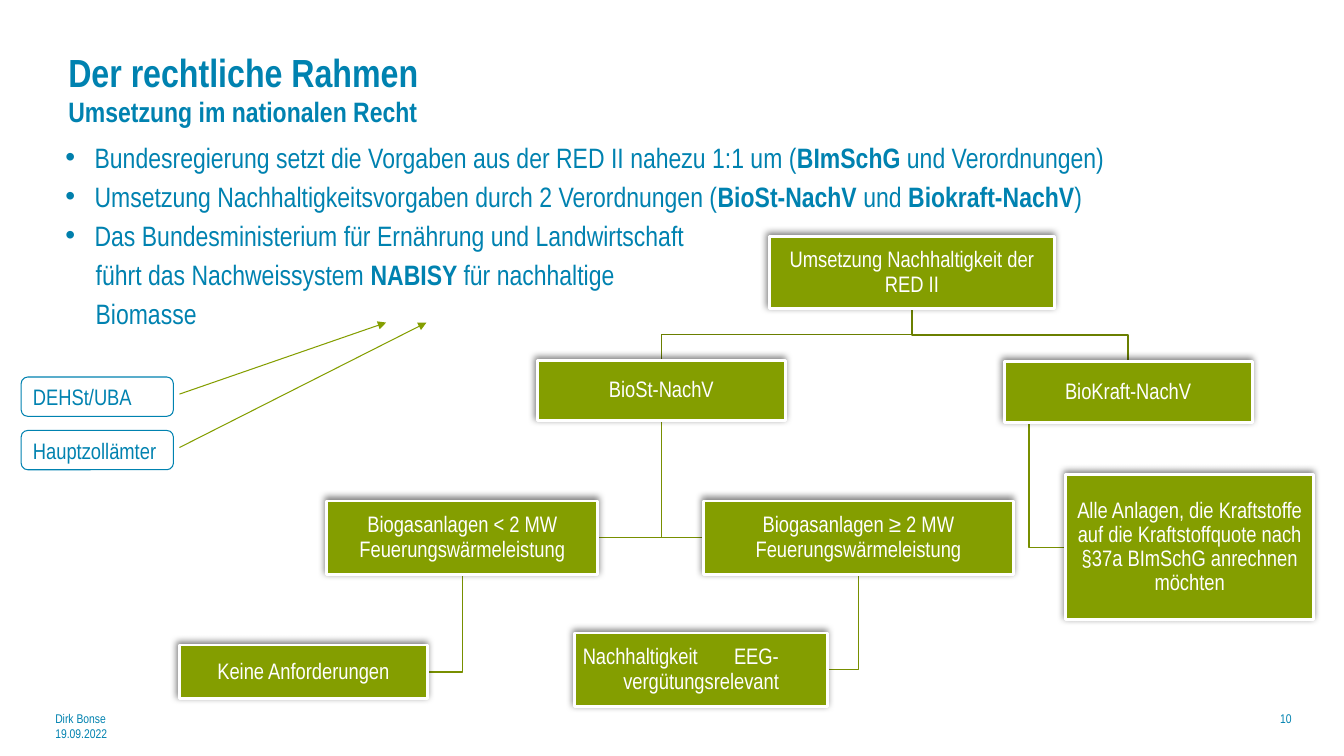
"""Build the slide on the national implementation of RED II as an organisation chart."""
from lxml import etree
from pptx import Presentation
from pptx.dml.color import RGBColor
from pptx.enum.shapes import MSO_CONNECTOR, MSO_SHAPE
from pptx.enum.text import MSO_ANCHOR, PP_ALIGN
from pptx.oxml.ns import qn
from pptx.util import Inches, Pt

LEFT, CENTER, RIGHT = PP_ALIGN.LEFT, PP_ALIGN.CENTER, PP_ALIGN.RIGHT
TOP, MIDDLE = MSO_ANCHOR.TOP, MSO_ANCHOR.MIDDLE
RECTANGLE, ROUNDED = MSO_SHAPE.RECTANGLE, MSO_SHAPE.ROUNDED_RECTANGLE
STRAIGHT = MSO_CONNECTOR.STRAIGHT

THEME = {
    "font": "Arial Narrow",
    "blue": RGBColor.from_string("0082B0"),
    "bullet": "007FAC",
    "green": RGBColor.from_string("849E00"),
    "upper line": RGBColor.from_string("6A7F00"),
    "lower line": RGBColor.from_string("788F00"),
    "white": RGBColor.from_string("FFFFFF"),
    "title": 28, "body": 20, "node": 16, "footer": 9,
}

deck = Presentation()
deck.slide_width, deck.slide_height = Inches(13.33), Inches(7.5)
page = deck.slides.add_slide(deck.slide_layouts[6])
COLUMN, ROW = deck.slide_width / 133.3, deck.slide_height / 75


def place(*cells):
    """Turn alternating columns and rows into slide lengths."""
    return [round(cell * (ROW if index % 2 else COLUMN)) for index, cell in enumerate(cells)]


def write(box, lines, sizes, color, align=LEFT, anchor=TOP):
    """Write one paragraph per line, with the parts between asterisks in bold."""
    frame = box.text_frame
    frame.word_wrap = True
    frame.vertical_anchor = anchor
    for index, line in enumerate(lines):
        para = frame.add_paragraph() if index else frame.paragraphs[0]
        para.alignment = align
        for part, words in enumerate(line.split("*")):
            if words:
                span = para.add_run()
                span.text = words
                span.font.name = THEME["font"]
                span.font.size = Pt(sizes[index % len(sizes)])
                span.font.bold = part % 2 == 1
                span.font.color.rgb = color
    return frame.paragraphs


title = page.shapes.add_textbox(*place(5.8, 2.5, 98.7, 12.5))
write(title, ["*Der rechtliche Rahmen*", "*Umsetzung im nationalen Recht*"],
      [THEME["title"], THEME["body"]], THEME["blue"], anchor=MIDDLE)

NODES = {
    "root": ((76.3, 23.5, 28.3, 7.1), ["Umsetzung Nachhaltigkeit der RED II"]),
    "power": ((53.3, 35.8, 24.6, 5.9), ["BioSt-NachV"]),
    "fuel": ((99.6, 35.9, 24.6, 6), ["BioKraft-NachV"]),
    "small": ((32.4, 49.7, 26.9, 7.3), ["Biogasanlagen < 2 MW Feuerungswärmeleistung"]),
    "large": ((69.8, 49.7, 30.7, 7.3), ["Biogasanlagen ≥ 2 MW Feuerungswärmeleistung"]),
    "none": ((17.8, 64, 24.6, 5.3), ["Keine Anforderungen"]),
    "paid": ((57, 62.8, 25.1, 7.3), ["Nachhaltigkeit\tEEG-", "vergütungsrelevant"]),
    "quota": ((105.7, 47.1, 24.6, 14.4),
              ["Alle Anlagen, die Kraftstoffe auf die Kraftstoffquote nach "
               "§37a BImSchG anrechnen möchten"]),
}
BRANCHES = [
    ("fuel", "quota", 0.1), ("root", "fuel", 0.5), ("large", "paid", 0.5), ("power", "large", 0.5),
    ("small", "none", 0.5), ("power", "small", 0.5), ("root", "power", 0.5),
]

for parent, child, share in BRANCHES:
    left, top, width, height = NODES[parent][0]
    child_left, child_top, child_width, child_height = NODES[child][0]
    start_x, start_y = left + width * share, top + height
    if parent == "root":
        bend, end_x = (start_y + child_top) / 2, child_left + child_width / 2
        corners = [(start_x, bend), (end_x, bend), (end_x, child_top)]
    else:
        bend = child_top + child_height / 2
        end_x = child_left if child_left > start_x else child_left + child_width
        corners = [(start_x, bend), (end_x, bend)]
    outline = page.shapes.build_freeform(*place(start_x, start_y), scale=1.0)
    outline.add_line_segments([place(*corner) for corner in corners], close=False)
    branch = outline.convert_to_shape()
    branch.shadow.inherit = False
    branch.fill.background()
    branch.line.color.rgb = THEME["upper line" if parent == "root" else "lower line"]
    branch.line.width = Pt(1)

node_paras = {}
for name, (cells, lines) in NODES.items():
    node = page.shapes.add_shape(RECTANGLE, *place(*cells))
    node.shadow.inherit = False
    node.fill.solid()
    node.fill.fore_color.rgb = THEME["green"]
    node.line.color.rgb = THEME["white"]
    node.line.width = Pt(2)
    effects = node._element.spPr.find(qn("a:effectLst"))
    shade = etree.SubElement(effects, qn("a:outerShdw"), blurRad=str(Pt(5)), dist=str(Pt(2)),
                             dir=str(245 * 60000), algn="ctr", rotWithShape="0")
    tone = etree.SubElement(shade, qn("a:srgbClr"), val="000000")
    etree.SubElement(tone, qn("a:alpha"), val="50000")
    frame = node.text_frame
    frame.margin_left = frame.margin_right = frame.margin_top = frame.margin_bottom = Inches(0.01)
    node_paras[name] = write(node, lines, [THEME["node"]], THEME["white"], CENTER, MIDDLE)
    for para in node_paras[name]:
        para.line_spacing = 0.9

spread = node_paras["paid"][0]
spread.alignment = LEFT
settings = spread._p.get_or_add_pPr()
settings.set("marL", str(Inches(0.07)))
settings.set("indent", "0")
tabs = etree.SubElement(settings, qn("a:tabLst"))
etree.SubElement(tabs, qn("a:tab"), pos=str(Inches(2.41)), algn="r")

body = page.shapes.add_textbox(*place(5.5, 13.4, 122.2, 49.6))
body_paras = write(body, [
    "Bundesregierung setzt die Vorgaben aus der RED II nahezu 1:1 um (*BImSchG* und Verordnungen)",
    "Umsetzung Nachhaltigkeitsvorgaben durch 2 Verordnungen (*BioSt-NachV* und *Biokraft-NachV*)",
    "Das Bundesministerium für Ernährung und Landwirtschaft",
    "führt das Nachweissystem *NABISY *für nachhaltige",
    "Biomasse",
], [THEME["body"]], THEME["blue"])
for index, para in enumerate(body_paras):
    settings = para._p.get_or_add_pPr()
    bulleted = index < 3
    settings.set("marL", str(Inches(0.29 if bulleted else 0.3)))
    settings.set("indent", str(Inches(-0.29 if bulleted else 0)))
    if bulleted:
        tint = etree.SubElement(settings, qn("a:buClr"))
        etree.SubElement(tint, qn("a:srgbClr"), val=THEME["bullet"])
        etree.SubElement(settings, qn("a:buFont"), typeface="Arial")
        etree.SubElement(settings, qn("a:buChar"), char="•")
    if index:
        para.space_before = Pt(4)

for index, (authority, arrow_end) in enumerate([("DEHSt/UBA", 38.3), ("Hauptzollämter", 42.3)]):
    top = 37.4 + 5.3 * index
    arrow = page.shapes.add_connector(STRAIGHT, *place(17.8, top + 1.7, arrow_end, 32))
    arrow.line.color.rgb = THEME["green"]
    arrow.line.width = Pt(0.75)
    etree.SubElement(arrow.line._get_or_add_ln(), qn("a:tailEnd"), type="triangle")
    etree.SubElement(arrow._element.spPr, qn("a:effectLst"))
    label = page.shapes.add_shape(ROUNDED, *place(2.1, top, 15.1, 3.9))
    label.shadow.inherit = False
    label.fill.solid()
    label.fill.fore_color.rgb = THEME["white"]
    label.line.color.rgb = THEME["blue"]
    label.line.width = Pt(0.75)
    label.text_frame.margin_right = 0
    write(label, [authority], [THEME["node"]], THEME["blue"], anchor=MIDDLE)

for cells, lines, align in [
    ((4.5, 70, 32.5, 5), ["Dirk Bonse", "19.09.2022"], LEFT),
    ((101.3, 70, 27.8, 5), ["10"], RIGHT),
]:
    write(page.shapes.add_textbox(*place(*cells)), lines, [THEME["footer"]], THEME["blue"], align)

deck.save("out.pptx")
